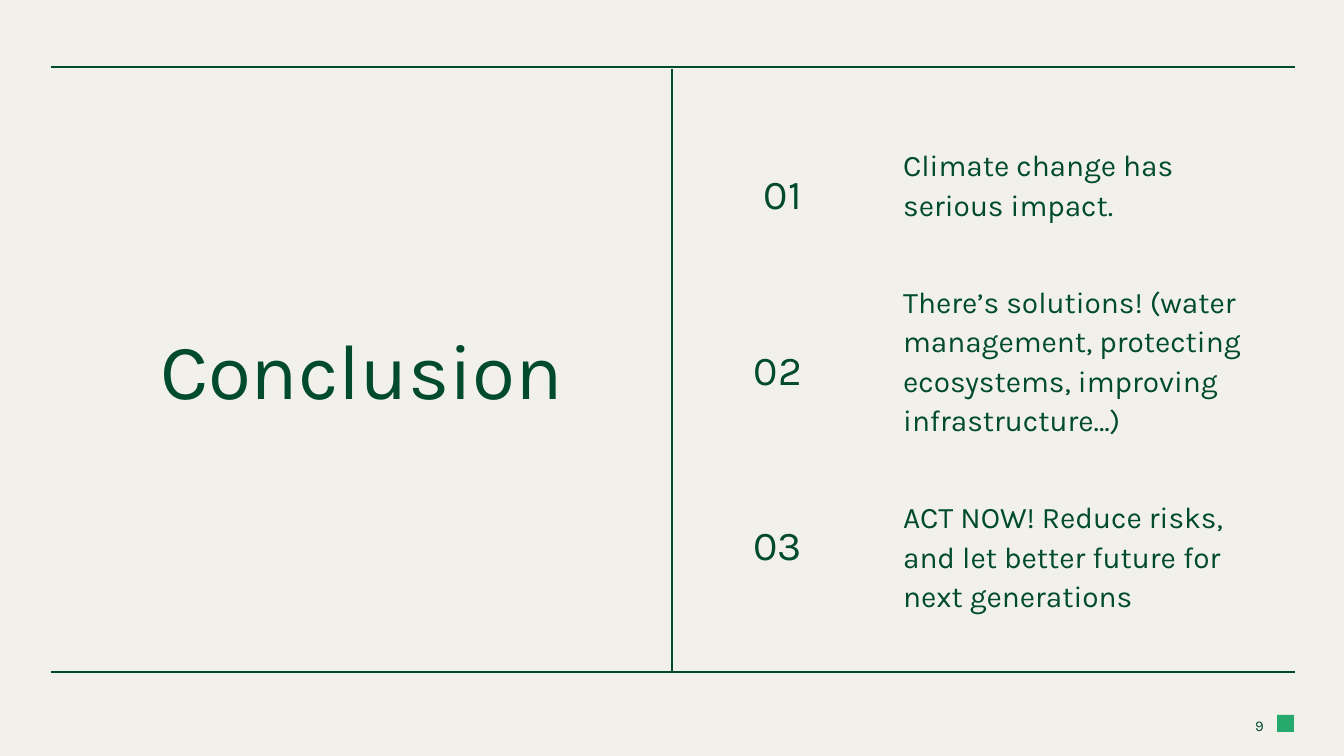
"""Build the conclusion slide: a title on the left and three numbered takeaways on the right."""
from pptx import Presentation
from pptx.dml.color import RGBColor
from pptx.enum.shapes import MSO_CONNECTOR, MSO_SHAPE
from pptx.enum.text import MSO_ANCHOR, PP_ALIGN
from pptx.oxml.ns import qn
from pptx.util import Inches, Pt

COLORS = {"paper": "F1F1E9", "forest": "004A2E", "accent": "26A96C"}
FONT = "Karla"
PX = 914400 / 134.4
INSET = Inches(0.1)

TITLE = "Conclusion"
PAGE = "9"
TAKEAWAYS = [
    ("01", "Climate change has serious impact."),
    ("02", "There’s solutions! (water management, protecting ecosystems, improving infrastructure…)"),
    ("03", "ACT NOW! Reduce risks, and let better future for next generations"),
]

LEFT, RIGHT, TOP, BOTTOM, MIDDLE = 51, 1295, 67, 672, 672
RULES = [
    (MIDDLE, BOTTOM, MIDDLE, TOP + 2),
    (LEFT, BOTTOM, RIGHT, BOTTOM),
    (LEFT, TOP, RIGHT, TOP),
]


def emu(*lengths):
    return [round(length * PX) for length in lengths]


def color(name):
    return RGBColor.from_string(COLORS[name])


def write(holder, lines, box, size, align=PP_ALIGN.LEFT, spacing=None, gap=0, after=0):
    holder.left, holder.top, holder.width, holder.height = emu(*box)
    frame = holder.text_frame
    frame.word_wrap = True
    frame.vertical_anchor = MSO_ANCHOR.MIDDLE
    frame.margin_left = frame.margin_right = INSET
    frame.margin_top = frame.margin_bottom = INSET
    for index, line in enumerate(lines):
        paragraph = frame.add_paragraph() if index else frame.paragraphs[0]
        paragraph.alignment = align
        paragraph.line_spacing = spacing
        paragraph.space_before = Pt(gap if index else 0)
        paragraph.space_after = Pt(after if index == len(lines) - 1 else 0)
        run = paragraph.add_run()
        run.text = line
        run.font.name = FONT
        run.font.size = Pt(size)
        run.font.color.rgb = color("forest")


def add_rule(slide, ends):
    rule = slide.shapes.add_connector(MSO_CONNECTOR.STRAIGHT, *emu(*ends))
    rule.line.color.rgb = color("forest")
    rule.line.width = Pt(0.75)
    properties = rule._element.spPr
    properties.append(properties.makeelement(qn("a:effectLst"), {}))


def add_text(slide, lines, box, size, **layout):
    write(slide.shapes.add_textbox(0, 0, 0, 0), lines, box, size, **layout)


def main():
    deck = Presentation()
    deck.slide_width, deck.slide_height = emu(1344, 756)
    slide = deck.slides.add_slide(deck.slide_layouts[5])
    slide.background.fill.solid()
    slide.background.fill.fore_color.rgb = color("paper")

    marker = slide.shapes.add_shape(MSO_SHAPE.RECTANGLE, *emu(1277, 715, 17, 17))
    marker.shadow.inherit = False
    marker.fill.solid()
    marker.fill.fore_color.rgb = color("accent")
    marker.line.fill.background()

    numbers, messages = zip(*TAKEAWAYS)
    write(slide.shapes.title, [TITLE], (67, 176, 589, 384), 42, align=PP_ALIGN.CENTER)
    add_text(slide, [PAGE], (1210, 706, 67, 40), 8, align=PP_ALIGN.RIGHT)
    add_text(slide, messages, (890, 156, 376, 445), 16, spacing=1.1, gap=31, after=5)
    add_text(slide, numbers, (734, 144, 81, 445), 22, align=PP_ALIGN.RIGHT,
             spacing=1.1, gap=65, after=5)

    for ends in RULES:
        add_rule(slide, ends)
    deck.save("out.pptx")


if __name__ == "__main__":
    main()
